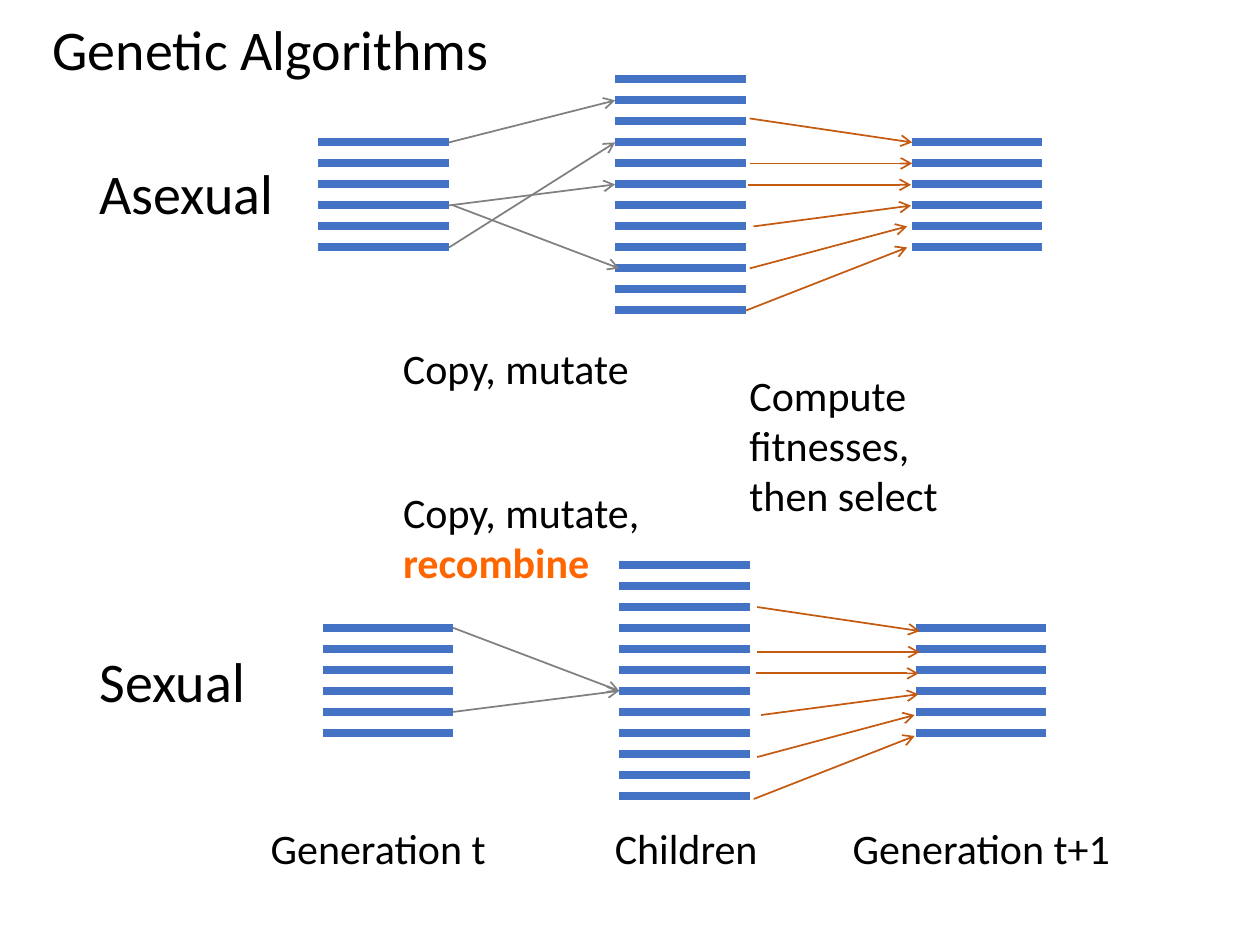
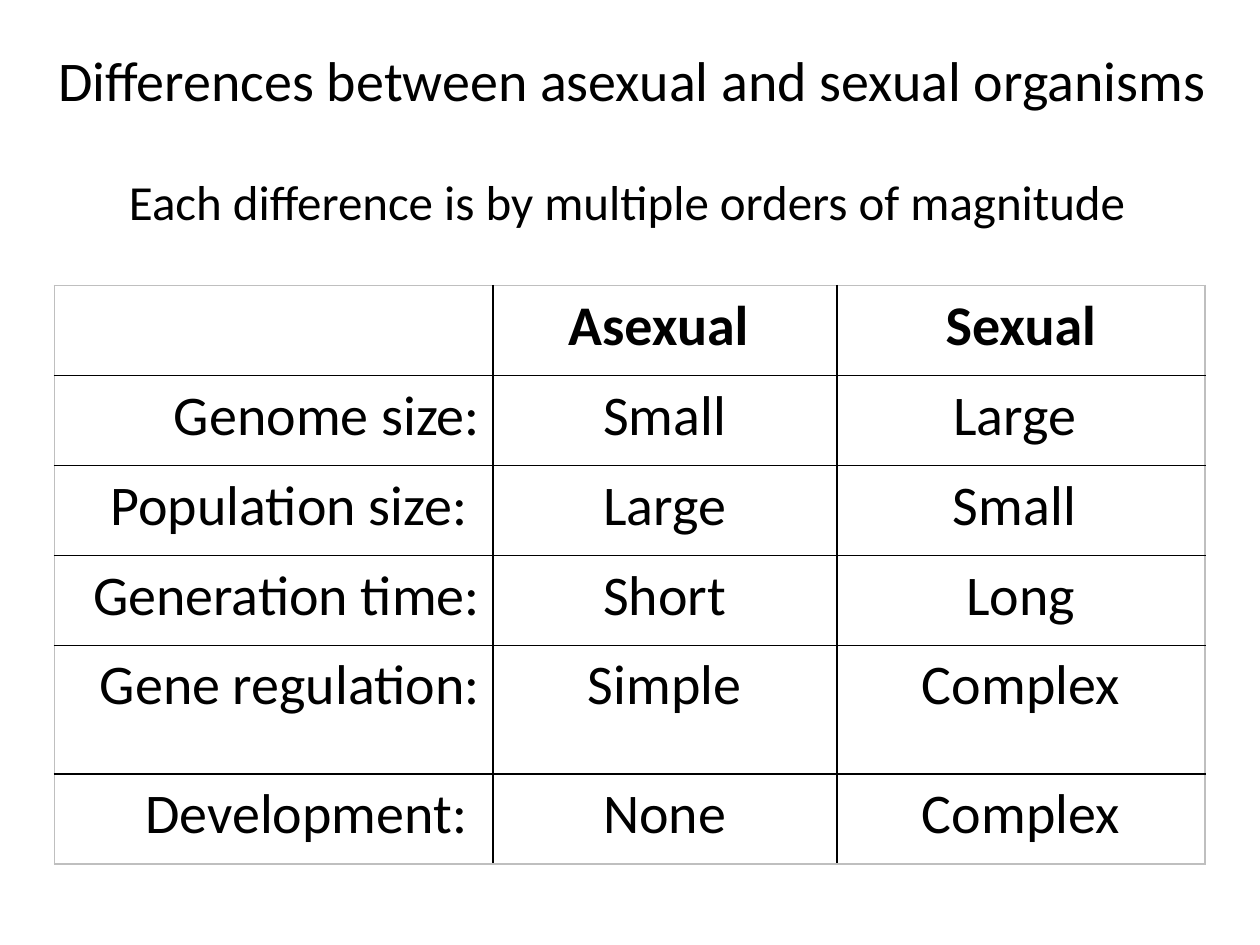
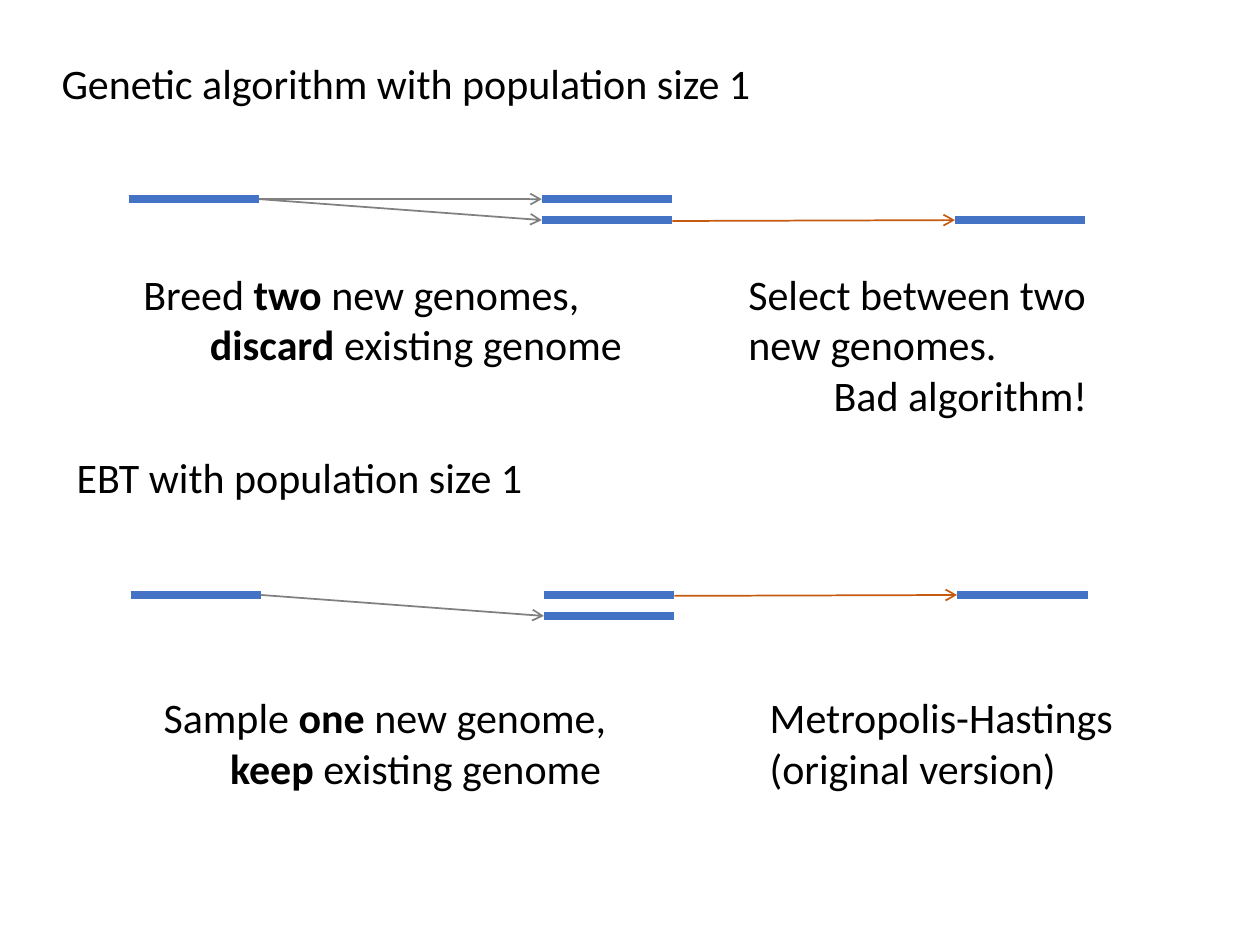
from pptx import Presentation
from pptx.dml.color import RGBColor
from pptx.enum.shapes import MSO_CONNECTOR
from pptx.enum.text import MSO_AUTO_SIZE, PP_ALIGN
from pptx.oxml.ns import qn
from pptx.util import Pt
from lxml.etree import SubElement

BLACK = RGBColor(0x00, 0x00, 0x00)
BLUE = RGBColor(0x44, 0x72, 0xC4)
GRAY = RGBColor(0x80, 0x80, 0x80)
BROWN = RGBColor(0xC5, 0x5A, 0x11)
ORANGE = RGBColor(0xFF, 0x66, 0x00)
FRAME_GRAY = RGBColor(0xBF, 0xBF, 0xBF)
FONT = "Calibri"

BAR_LENGTH = 74.6
BAR_PITCH = 12

# Text boxes: left, top, width, height, size, paragraphs.
# A paragraph is a string, or a string with its format; *stars* mark bold.
EVOLUTION_TEXTS = [
    (23, 5, 347, 46, 32, ["Genetic Algorithms"]),
    (49.7, 87.1, 137.5, 46, 32, ["Asexual"]),
    (49.7, 365.8, 137.5, 46, 32, ["Sexual"]),
    (223.2, 192.2, 153.4, 36, 24, ["Copy, mutate"]),
    (223.2, 274.3, 190.8, 65.5, 24,
     ["Copy, mutate,", ("*recombine*", {"color": ORANGE})]),
    (421.2, 207.4, 151.2, 94.3, 24, ["Compute fitnesses, then select"]),
    (147.6, 466.6, 157.7, 36, 24, ["Generation t"]),
    (480.2, 466.6, 190, 36, 24, ["Generation t+1"]),
    (344.2, 466.6, 97.2, 36, 24, ["Children"]),
]

# Breeding arrows: parent row, child row, shift to the right
EVOLUTIONS = [
    {"left": 182, "top": 45.4, "selection_shift": (0, 0),
     "breeding": [(0, 1, 0), (3, 9, 2.4), (5, 3, 0), (3, 5, 0)]},
    {"left": 184.4, "top": 322.8, "selection_shift": (4.3, 279.2),
     "breeding": [(0, 6, 0), (4, 6, 0)]},
]
GENERATION_PITCH = 169.5
PARENT_COUNT, CHILD_COUNT = 6, 12
FIRST_PARENT_ROW = 3
SELECTION_ARROWS = [
    (428.4, 67.7, 521.3, 81.4),
    (428.4, 93.4, 521.3, 93.4),
    (427.7, 105.6, 520.6, 105.6),
    (430.6, 129.4, 520.6, 117.5),
    (428.4, 153.4, 518.4, 129.4),
    (426.4, 177.4, 518.4, 141.4),
]

DIFFERENCE_TEXTS = [
    (21.6, 22.3, 679.7, 113.8, 32, [
        ("Differences between asexual and sexual organisms",
         {"align": PP_ALIGN.CENTER}),
        ("Each difference is by multiple orders of magnitude ",
         {"align": PP_ALIGN.CENTER, "size": 28, "space_before": 34}),
    ]),
]
DIFFERENCES = [
    ("", "*Asexual *", "*Sexual*"),
    ("Genome size:", "Small", "Large "),
    ("Population size: ", "Large", "Small "),
    ("Generation time:", "Short", "Long"),
    ("Gene regulation:", "Simple", "Complex"),
    ("Development: ", "None", "Complex"),
]
TABLE_LEFT, TABLE_TOP = 31, 163.2
COLUMN_WIDTHS = [250.6, 196.6, 210.4]
ROW_HEIGHTS = [51.4, 51.4, 51.4, 51.4, 73.6, 51.4]

SINGLE_TEXTS = [
    (28.1, 29.5, 455.8, 36, 24, ["Genetic algorithm with population size 1"]),
    (36.7, 254.2, 455.8, 36, 24, ["EBT with population size 1"]),
    (74.9, 149.8, 316.8, 65.4, 24,
     ["Breed *two* new genomes,", ("*discard* existing genome", {"indent": 38})]),
    (86.4, 391.7, 316.8, 65.4, 24,
     ["Sample *one* new genome,", ("*keep* existing genome", {"indent": 38})]),
    (420.5, 149.8, 234, 94.3, 24,
     ["Select between two new genomes.", ("Bad algorithm!", {"indent": 48.8})]),
    (432.7, 391.7, 234, 94.3, 24, ["Metropolis-Hastings", "(original version)"]),
]
# Bred rows are those an arrow from the parent reaches.
SINGLE_DIAGRAMS = [
    {"left": 74.7, "top": 340, "bred": [1], "selected": 0},
    {"left": 73.5, "top": 113.8, "bred": [1, 0], "selected": 1},
]
SINGLE_PITCH = 236.1


def write_paragraph(paragraph, text, size=24, color=BLACK,
                    align=PP_ALIGN.LEFT, indent=0, space_before=0):
    if indent:
        paragraph._p.get_or_add_pPr().set("marL", str(Pt(indent)))
    paragraph.alignment = align
    if space_before:
        paragraph.space_before = Pt(space_before)
    for index, part in enumerate(text.split("*")):
        if part:
            run = paragraph.add_run()
            run.text = part
            run.font.name = FONT
            run.font.size = Pt(size)
            run.font.bold = index % 2 == 1
            run.font.color.rgb = color


def add_texts(slide, texts):
    for left, top, width, height, size, paragraphs in texts:
        box = slide.shapes.add_textbox(Pt(left), Pt(top), Pt(width), Pt(height))
        frame = box.text_frame
        frame.word_wrap = True
        frame.auto_size = MSO_AUTO_SIZE.SHAPE_TO_FIT_TEXT
        for index, item in enumerate(paragraphs):
            text, options = (item, {}) if isinstance(item, str) else item
            paragraph = frame.add_paragraph() if index else frame.paragraphs[0]
            write_paragraph(paragraph, text, **{"size": size, **options})


def add_line(shapes, start, end, color, width):
    line = shapes.add_connector(MSO_CONNECTOR.STRAIGHT, *map(Pt, start + end))
    line.line.color.rgb = color
    line.line.width = Pt(width)
    SubElement(line._element.spPr, qn("a:effectLst"))
    return line


def add_arrow(shapes, start, end, color):
    arrow = add_line(shapes, start, end, color, 1)
    SubElement(arrow.line._get_or_add_ln(), qn("a:tailEnd"), type="arrow")


def add_genomes(shapes, left, top, count):
    for row in range(count):
        y = top + row * BAR_PITCH
        add_line(shapes, (left, y), (left + BAR_LENGTH, y), BLUE, 4.5)


def add_evolution(shapes, left, top, breeding, selection_shift):
    parent_top = top + FIRST_PARENT_ROW * BAR_PITCH
    children_left = left + GENERATION_PITCH
    add_genomes(shapes, left, parent_top, PARENT_COUNT)
    add_genomes(shapes, children_left + GENERATION_PITCH, parent_top, PARENT_COUNT)
    add_genomes(shapes, children_left, top, CHILD_COUNT)
    for parent, child, shift in breeding:
        add_arrow(shapes,
                  (left + BAR_LENGTH + shift, parent_top + parent * BAR_PITCH),
                  (children_left + shift, top + child * BAR_PITCH), GRAY)
    dx, dy = selection_shift
    for x1, y1, x2, y2 in SELECTION_ARROWS:
        add_arrow(shapes, (x1 + dx, y1 + dy), (x2 + dx, y2 + dy), BROWN)


def add_single_diagram(shapes, left, top, bred, selected):
    children_left = left + SINGLE_PITCH
    survivor_left = children_left + SINGLE_PITCH
    survivor_y = top + selected * BAR_PITCH
    add_genomes(shapes, children_left, top, 2)
    add_genomes(shapes, survivor_left, survivor_y, 1)
    add_genomes(shapes, left, top, 1)
    for row in bred:
        add_arrow(shapes, (left + BAR_LENGTH, top),
                  (children_left, top + row * BAR_PITCH), GRAY)
    add_arrow(shapes, (children_left + BAR_LENGTH, survivor_y + 0.5),
              (survivor_left, survivor_y), BROWN)


def set_border(cell, side, color):
    border = SubElement(cell._tc.get_or_add_tcPr(), qn(f"a:{side}"), w=str(Pt(1)))
    fill = SubElement(border, qn("a:solidFill"))
    SubElement(fill, qn("a:srgbClr"), val=str(color))


def add_difference_table(slide):
    row_count, column_count = len(DIFFERENCES), len(COLUMN_WIDTHS)
    table = slide.shapes.add_table(
        row_count, column_count, Pt(TABLE_LEFT), Pt(TABLE_TOP),
        Pt(sum(COLUMN_WIDTHS)), Pt(sum(ROW_HEIGHTS))).table
    table.first_row = table.horz_banding = False
    for column, width in zip(table.columns, COLUMN_WIDTHS):
        column.width = Pt(width)
    for row, height in zip(table.rows, ROW_HEIGHTS):
        row.height = Pt(height)
    for row, texts in enumerate(DIFFERENCES):
        for column, text in enumerate(texts):
            cell = table.cell(row, column)
            outer_sides = {"lnL": column == 0, "lnR": column == column_count - 1,
                           "lnT": row == 0, "lnB": row == row_count - 1}
            for side, is_outer in outer_sides.items():
                set_border(cell, side, FRAME_GRAY if is_outer else BLACK)
            cell.fill.background()
            write_paragraph(cell.text_frame.paragraphs[0], text, size=32,
                            align=PP_ALIGN.CENTER if column else PP_ALIGN.RIGHT)


def main():
    presentation = Presentation()
    presentation.slide_width, presentation.slide_height = Pt(720), Pt(540)
    blank = presentation.slide_layouts[6]

    slide = presentation.slides.add_slide(blank)
    for evolution in EVOLUTIONS:
        add_evolution(slide.shapes, **evolution)
    add_texts(slide, EVOLUTION_TEXTS)

    slide = presentation.slides.add_slide(blank)
    add_difference_table(slide)
    add_texts(slide, DIFFERENCE_TEXTS)

    slide = presentation.slides.add_slide(blank)
    for diagram in SINGLE_DIAGRAMS:
        add_single_diagram(slide.shapes.add_group_shape().shapes, **diagram)
    add_texts(slide, SINGLE_TEXTS)

    presentation.save("out.pptx")


if __name__ == "__main__":
    main()
